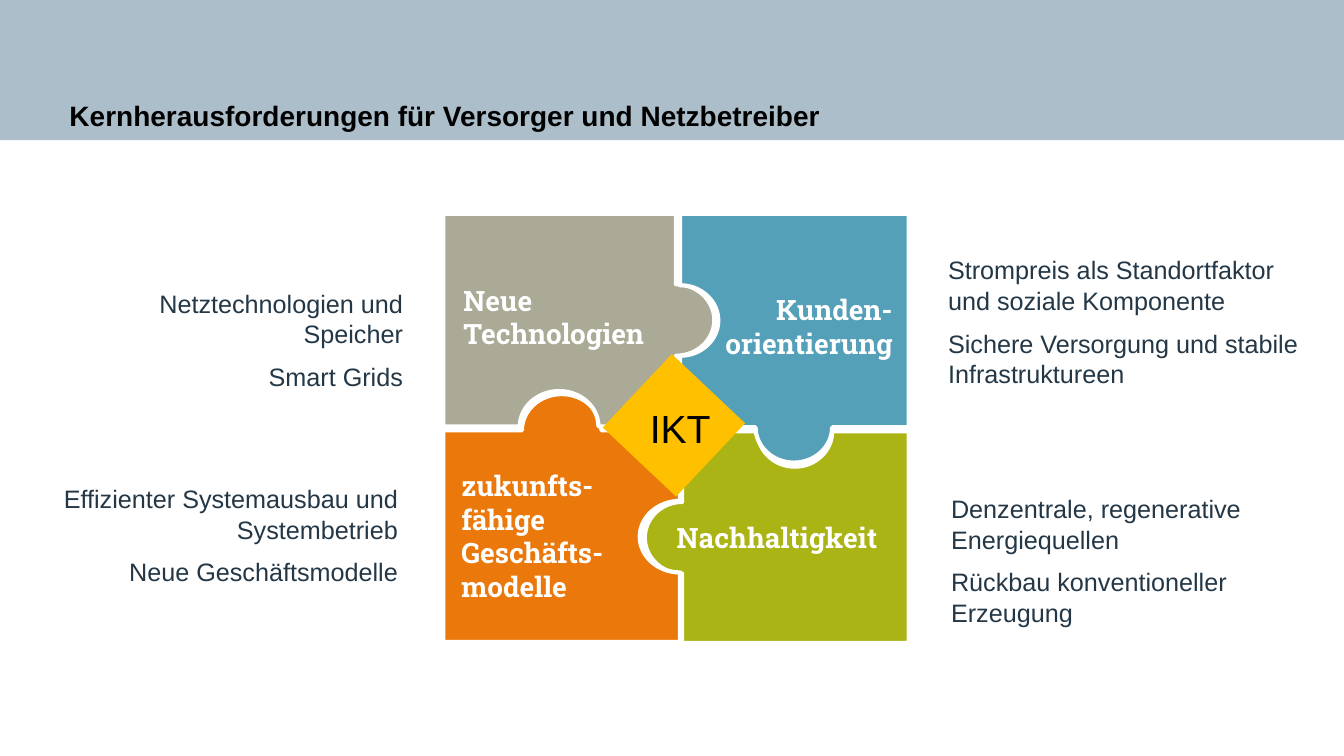
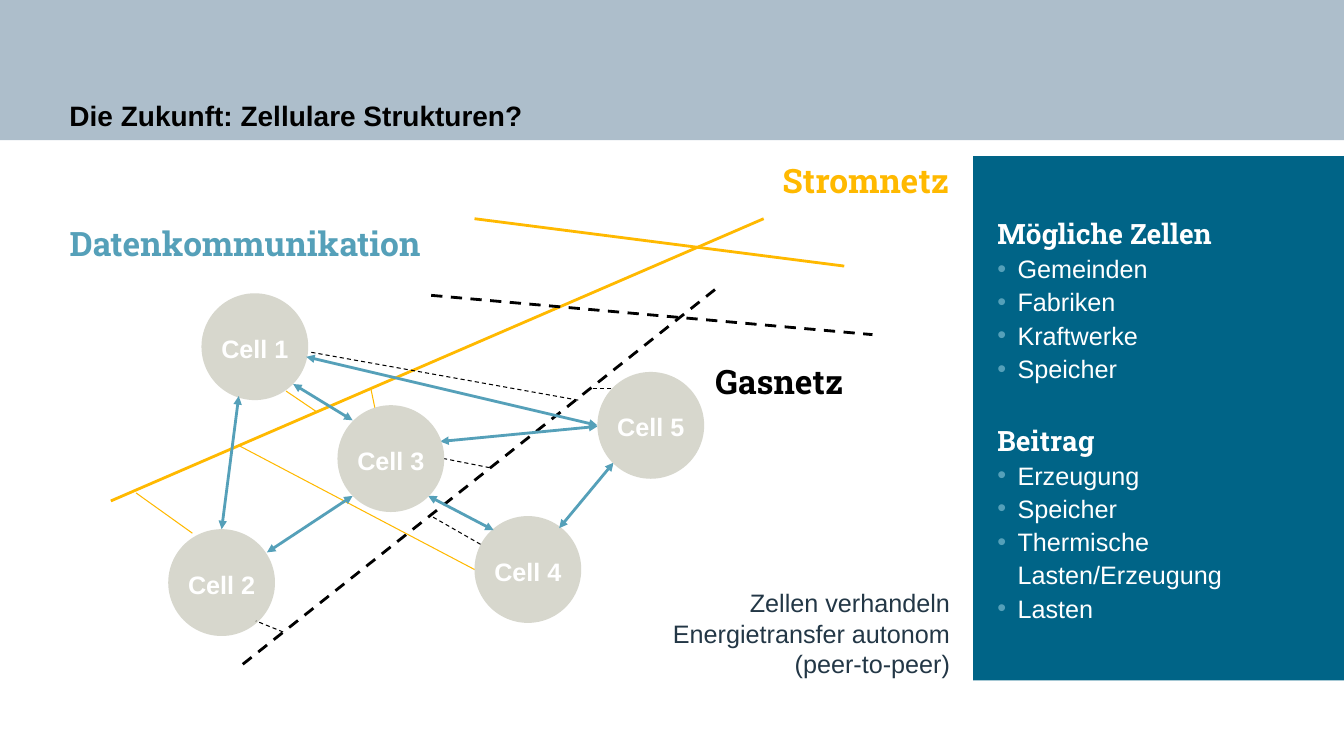
from lxml import etree
from pptx import Presentation
from pptx.dml.color import RGBColor
from pptx.enum.dml import MSO_LINE
from pptx.enum.shapes import MSO_CONNECTOR, MSO_SHAPE
from pptx.enum.text import MSO_ANCHOR, PP_ALIGN
from pptx.oxml.ns import qn
from pptx.util import Emu, Pt

# Shared look; all lengths are px, 100 to the inch
PX = 9144
WIDTH, HEIGHT = 1334, 750
BODY_FONT, HEAD_FONT = "Arial", "Roboto Slab"
BLACK, WHITE, INK = "000000", "FFFFFF", "233746"
BAND, PANEL, CELL = "ADBECB", "006487", "D7D7CD"
BLUE, AMBER = "55A0B9", "FFB900"
LEFT, CENTER, RIGHT = PP_ALIGN.LEFT, PP_ALIGN.CENTER, PP_ALIGN.RIGHT
TOP, MIDDLE, BOTTOM = MSO_ANCHOR.TOP, MSO_ANCHOR.MIDDLE, MSO_ANCHOR.BOTTOM
TITLE_BOX = (0, 0, WIDTH, 139)

# Slide 1: outlines are corners (x, y) or knobs (x, y, bulge x, bulge y)
CHALLENGES_TITLE = "Kernherausforderungen für Versorger und Netzbetreiber"
PUZZLE = [
    dict(fill="AAB414",
         outline=[(677, 428), (752, 428), (826, 428, 0, 35), (902, 428), (902, 638),
                  (677, 638), (677, 569), (677, 498, -37, 0)],
         label=["Nachhaltigkeit"], label_box=(660, 516, 211, 34), label_align=RIGHT,
         notes=["Denzentrale, regenerative Energiequellen",
                "Rückbau konventioneller Erzeugung"],
         notes_box=(905, 451, 398, 210), notes_align=LEFT),
    dict(fill="EB780A",
         outline=[(440, 427), (518, 427), (597, 427, 0, -36), (675, 427), (675, 497),
                  (675, 568, -40, 0), (675, 637), (440, 637)],
         label=["zukunfts-", "fähige", "Geschäfts-", "modelle"],
         label_box=(458, 464, 160, 135), label_align=LEFT,
         notes=["Effizienter Systemausbau und Systembetrieb", "Neue Geschäftsmodelle"],
         notes_box=(13, 427, 421, 208), notes_align=RIGHT),
    dict(fill="AAAA96",
         outline=[(440, 212), (671, 212), (671, 282), (671, 353, 38, 0), (671, 423),
                  (594, 423), (516, 423, 0, -35), (440, 423)],
         label=["Neue", "Technologien"], label_box=(460, 281, 200, 67), label_align=LEFT,
         notes=["Netztechnologien und Speicher", "Smart Grids"],
         notes_box=(41, 233, 398, 208), notes_align=RIGHT),
    dict(fill=BLUE,
         outline=[(675, 212), (902, 212), (902, 424), (826, 424), (750, 424, 0, 35),
                  (675, 424), (675, 353), (675, 283, 38, 0)],
         label=["Kunden-", "orientierung"], label_box=(704, 290, 182, 67),
         label_align=RIGHT,
         notes=["Strompreis als Standortfaktor und soziale Komponente",
                "Sichere Versorgung und stabile Infrastruktureen"],
         notes_box=(902, 215, 432, 208), notes_align=LEFT),
]

# Slide 2
CELLS_TITLE = "Die Zukunft: Zellulare Strukturen?"
PANEL_GROUPS = [
    ("Mögliche Zellen", ["Gemeinden", "Fabriken", "Kraftwerke", "Speicher"]),
    ("Beitrag", ["Erzeugung", "Speicher", "Thermische Lasten/Erzeugung", "Lasten"]),
]
CELL_SIZE = 106
CELLS_BELOW_LINES = [("Cell 4", 471, 512), ("Cell 1", 200, 291), ("Cell 2", 167, 525)]
CELLS_ABOVE_LINES = [("Cell 3", 335, 402), ("Cell 5", 593, 369)]
NETWORK_LABELS = [
    ("Stromnetz", (457, 155, 485, 41), AMBER, RIGHT),
    ("Gasnetz", (710, 354, 150, 41), BLACK, LEFT),
    ("Datenkommunikation", (69, 217, 368, 41), BLUE, LEFT),
]
PEER_NOTE = "Zellen verhandeln Energietransfer autonom (peer-to-peer)"
# Each network: colour, width in pt, dashed, arrows, lines
NETWORKS = [
    (AMBER, 2, False, False, [(110, 497, 758, 217), (471, 217, 838, 264)]),
    (BLACK, 2, True, False, [(241, 659, 710, 287), (428, 293, 866, 332)]),
    (AMBER, 0.75, False, False, [(284, 388, 315, 409), (373, 409, 368, 385),
                                 (135, 489, 191, 529), (471, 565, 237, 442)]),
    (BLACK, 0.75, True, False, [(281, 627, 254, 616), (477, 540, 428, 512),
                                (574, 397, 306, 349), (486, 464, 441, 455),
                                (614, 385, 589, 385)]),
    (BLUE, 2, False, True, [(291, 381, 350, 417), (304, 354, 593, 422),
                            (425, 492, 490, 526), (350, 492, 265, 548),
                            (437, 438, 593, 423), (555, 524, 609, 459),
                            (237, 393, 220, 525)]),
]


def px(*lengths):
    return [Emu(round(length * PX)) for length in lengths]


def color(hex_string):
    return RGBColor.from_string(hex_string)


def frame(shape, anchor=TOP, insets=(0, 0, 0, 0), wrap=True):
    text = shape.text_frame
    text.word_wrap, text.vertical_anchor = wrap, anchor
    (text.margin_left, text.margin_top,
     text.margin_right, text.margin_bottom) = px(*insets)
    return text


def write(text, lines, size, ink, font=BODY_FONT, bold=False, align=LEFT,
          spacing=1.0, before=0, bullet=None):
    """Add paragraphs; the first paragraph of a box gets no space before."""
    for line in lines:
        first = not text.paragraphs[0].runs
        paragraph = text.paragraphs[0] if first else text.add_paragraph()
        if bullet:
            props = paragraph._p.get_or_add_pPr()
            props.set("marL", str(20 * PX))
            props.set("indent", str(-20 * PX))
            bullet_color = etree.SubElement(props, qn("a:buClr"))
            etree.SubElement(bullet_color, qn("a:srgbClr"), val=bullet)
            etree.SubElement(props, qn("a:buFont"), typeface=BODY_FONT)
            etree.SubElement(props, qn("a:buChar"), char="•")
        paragraph.alignment, paragraph.line_spacing = align, spacing
        if before and not first:
            paragraph.space_before = Pt(before)
        run = paragraph.add_run()
        run.text = line
        run.font.size, run.font.name, run.font.bold = Pt(size), font, bold
        run.font.color.rgb = color(ink)


def add_text(slide, box, lines, size, ink, anchor=TOP, insets=(0, 0, 0, 0), **style):
    write(frame(slide.shapes.add_textbox(*px(*box)), anchor, insets),
          lines, size, ink, **style)


def paint(shape, fill):
    shape.shadow.inherit = False
    shape.fill.solid()
    shape.fill.fore_color.rgb = color(fill)
    shape.line.fill.background()
    return shape


def add_block(slide, kind, box, fill):
    return paint(slide.shapes.add_shape(kind, *px(*box)), fill)


def add_titled_slide(deck, title):
    slide = deck.slides.add_slide(deck.slide_layouts[6])
    add_block(slide, MSO_SHAPE.RECTANGLE, TITLE_BOX, BAND)
    add_text(slide, TITLE_BOX, [title], 20, BLACK, BOTTOM, (69, 43, 232, 26), bold=True)
    return slide


def trace(outline):
    """List (end point, control points); a knob is two quarter ellipses."""
    steps, pull = [], 0.55
    for x, y, *bulge in outline:
        if not bulge:
            steps.append(((x, y), ()))
            continue
        (x0, y0), (bx, by) = steps[-1][0], bulge
        half_x, half_y = (x - x0) / 2, (y - y0) / 2
        top_x, top_y = x0 + half_x + bx, y0 + half_y + by
        steps.append(((top_x, top_y),
                      ((x0 + bx * pull, y0 + by * pull),
                       (top_x - half_x * pull, top_y - half_y * pull))))
        steps.append(((x, y),
                      ((top_x + half_x * pull, top_y + half_y * pull),
                       (x + bx * pull, y + by * pull))))
    return steps


def add_piece(slide, outline, fill):
    steps = trace(outline)
    start, *ends = [px(*end) for end, _ in steps]
    builder = slide.shapes.build_freeform(*start, scale=1.0)
    builder.add_line_segments(ends, close=True)
    piece = paint(builder.convert_to_shape(), fill)
    piece.line.color.rgb = color(WHITE)
    piece.line.width = Pt(3)
    # Bend the knob segments
    segments = list(piece._element.iter(qn("a:lnTo")))
    for segment, (_, controls) in zip(segments, steps[1:]):
        if controls:
            segment.tag = qn("a:cubicBezTo")
            for place, control in enumerate(controls):
                x, y = px(*control)
                segment.insert(place, etree.Element(
                    qn("a:pt"), x=str(x - piece.left), y=str(y - piece.top)))


def add_line(slide, ends, ink, width, dashed, arrows):
    line = slide.shapes.add_connector(MSO_CONNECTOR.STRAIGHT, *px(*ends))
    line.line.color.rgb = color(ink)
    line.line.width = Pt(width)
    if dashed:
        line.line.dash_style = MSO_LINE.DASH
    if arrows:
        for end in ("a:headEnd", "a:tailEnd"):
            etree.SubElement(line.line._get_or_add_ln(), qn(end), type="triangle")
    etree.SubElement(line._element.spPr, qn("a:effectLst"))


def add_cells(slide, cells):
    for name, left, top in cells:
        cell = add_block(slide, MSO_SHAPE.OVAL, (left, top, CELL_SIZE, CELL_SIZE), CELL)
        write(frame(cell, MIDDLE, wrap=False), [name], 18, WHITE, bold=True,
              align=CENTER, spacing=1.1)


def build_challenges(deck):
    slide = add_titled_slide(deck, CHALLENGES_TITLE)
    for piece in PUZZLE:
        add_piece(slide, piece["outline"], piece["fill"])
        add_text(slide, piece["label_box"], piece["label"], 20, WHITE, MIDDLE,
                 font=HEAD_FONT, bold=True, align=piece["label_align"])
        add_text(slide, piece["notes_box"], piece["notes"], 18, INK, MIDDLE,
                 (39, 0, 39, 0), align=piece["notes_align"], before=9)
    # Centre diamond
    diamond = add_block(slide, MSO_SHAPE.RECTANGLE, (619, 372, 100, 100), "FFC000")
    diamond.rotation = 313.3
    add_text(slide, (645, 396, 70, 52), ["IKT"], 28, BLACK, spacing=1.1)


def build_cells(deck):
    slide = add_titled_slide(deck, CELLS_TITLE)
    # Side panel
    panel = add_block(slide, MSO_SHAPE.RECTANGLE, (966, 155, 368, 520), PANEL)
    text = frame(panel, MIDDLE, (24, 6, 59, 6))
    for heading, items in PANEL_GROUPS:
        write(text, [heading], 20, WHITE, HEAD_FONT, True, spacing=1.1, before=26)
        write(text, items, 18, WHITE, spacing=1.1, bullet=BLUE)
    # Networks and cells
    add_cells(slide, CELLS_BELOW_LINES)
    for ink, width, dashed, arrows, lines in NETWORKS:
        for ends in lines:
            add_line(slide, ends, ink, width, dashed, arrows)
    add_cells(slide, CELLS_ABOVE_LINES)
    # Labels
    for label, box, ink, align in NETWORK_LABELS:
        add_text(slide, box, [label], 24, ink, font=HEAD_FONT, bold=True,
                 align=align, spacing=1.1)
    add_text(slide, (631, 583, 312, 91), [PEER_NOTE], 18, INK, align=RIGHT)


def main():
    deck = Presentation()
    deck.slide_width, deck.slide_height = px(WIDTH, HEIGHT)
    build_challenges(deck)
    build_cells(deck)
    deck.save("out.pptx")


if __name__ == "__main__":
    main()
